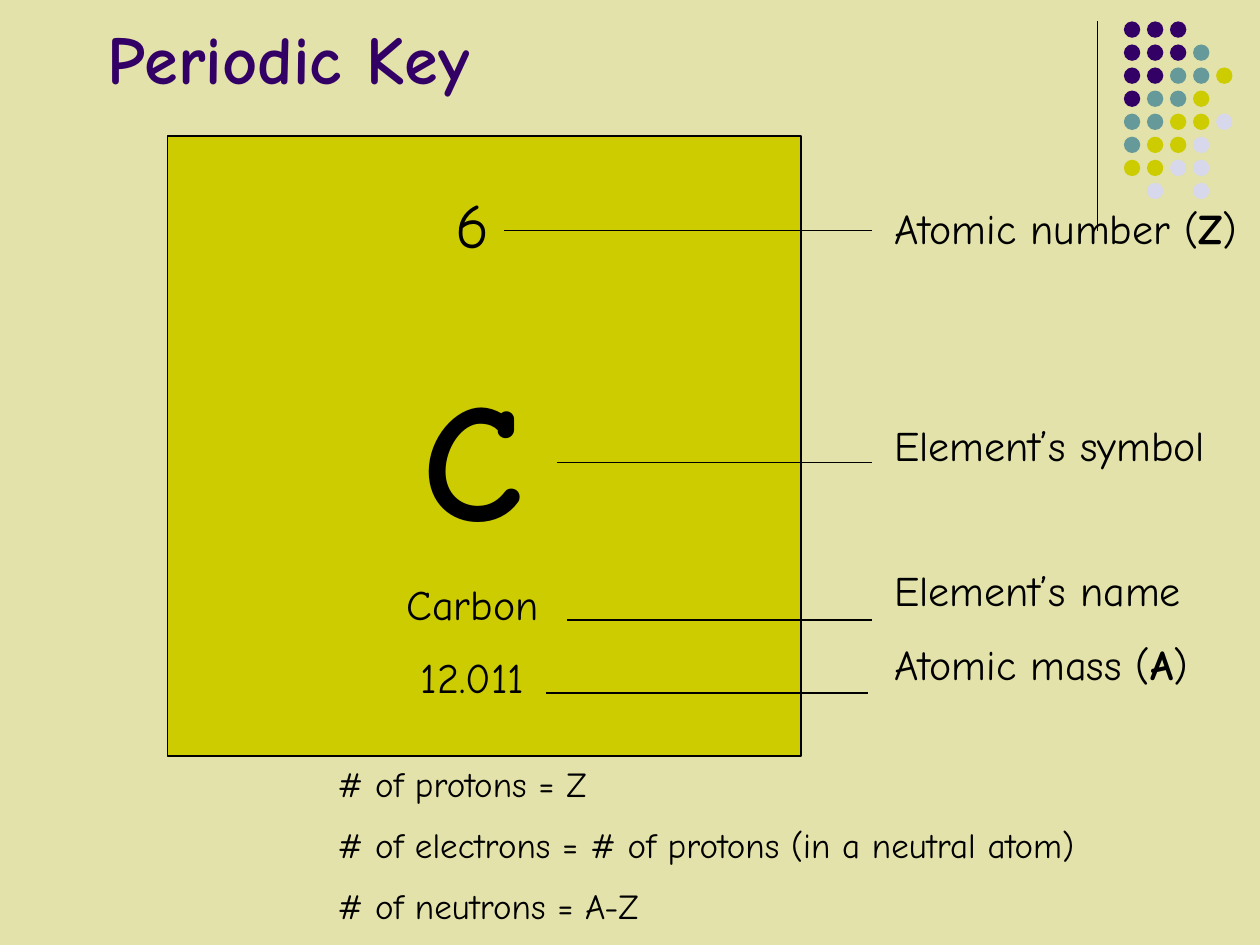
from lxml import etree
from pptx import Presentation
from pptx import util as u
from pptx.dml.color import RGBColor
from pptx.enum import shapes, text
from pptx.oxml import ns

CREAM = RGBColor(0xE2, 0xE2, 0xAA)
PURPLE = RGBColor(0x33, 0x00, 0x66)
TEAL = RGBColor(0x66, 0x99, 0x99)
OLIVE = RGBColor(0xCC, 0xCC, 0x00)
LAVENDER = RGBColor(0xD8, 0xD8, 0xEC)
BLACK = RGBColor(0x00, 0x00, 0x00)

DOT_COLORS = {"P": PURPLE, "T": TEAL, "O": OLIVE, "L": LAVENDER}
DOT_ROWS = ["PPP", "PPPT", "PPTTO", "PTTO", "TTOOL", "TOOL", "OOLL", " L L"]
DOT_SIZE = 0.13
DOT_STEP = 0.183

CELL_ROWS = [
    (0, [("6", 36, False)]),
    (53, [("C", 96, True)]),
    (13.3, [("Carbon", 24, False)]),
    (13.3, [("12.011", 24, False)]),
]
LABEL_ROWS = [
    (0, [("Atomic number (", 24, False), ("Z", 24, True), (")", 24, False)]),
    (95, [("Element’s symbol", 24, False)]),
    (54.2, [("Element’s name", 24, False)]),
    (13.3, [("Atomic mass (", 24, False), ("A", 24, True), (")", 24, False)]),
]
FORMULA_ROWS = [
    (0, [("# of protons = Z", 20, False)]),
    (11, [("# of electrons = # of protons (in a neutral atom)", 20, False)]),
    (11, [("# of neutrons = A-Z", 20, False)]),
]
LEADERS = [(4, 6.92, 1.83), (4.5, 6.92, 4.92), (4.33, 6.89, 5.5), (4.42, 6.92, 3.67)]


class SlideWriter:
    font = "Comic Neue"

    def __init__(self, page):
        self.page = page
        fill = page.background.fill
        fill.solid()
        fill.fore_color.rgb = CREAM

    def span(self, para, words, size, bold, color=BLACK):
        span = para.add_run()
        span.text = words
        span.font.name = self.font
        span.font.size = u.Pt(size)
        span.font.bold = bold
        span.font.color.rgb = color

    def title(self, words, left, top, width, height):
        box = self.page.shapes.title
        box.left, box.top = u.Inches(left), u.Inches(top)
        box.width, box.height = u.Inches(width), u.Inches(height)
        frame = box.text_frame
        frame.auto_size = text.MSO_AUTO_SIZE.NONE
        frame.vertical_anchor = text.MSO_ANCHOR.TOP
        frame.margin_top = 0
        para = frame.paragraphs[0]
        para.alignment = text.PP_ALIGN.LEFT
        self.span(para, words, 39, True, PURPLE)

    def text_box(self, rows, left, top, width, height, align=text.PP_ALIGN.LEFT):
        box = self.page.shapes.add_textbox(
            u.Inches(left), u.Inches(top), u.Inches(width), u.Inches(height))
        frame = box.text_frame
        frame.word_wrap = True
        for index, (gap, spans) in enumerate(rows):
            para = frame.add_paragraph() if index else frame.paragraphs[0]
            para.alignment = align
            para.space_before = u.Pt(gap)
            for words, size, bold in spans:
                self.span(para, words, size, bold)

    def shape(self, kind, left, top, width, height, color, outline=None):
        shape = self.page.shapes.add_shape(
            kind, u.Inches(left), u.Inches(top), u.Inches(width), u.Inches(height))
        shape.shadow.inherit = False
        shape.fill.solid()
        shape.fill.fore_color.rgb = color
        if outline:
            shape.line.color.rgb = BLACK
            shape.line.width = u.Pt(outline)
        else:
            shape.line.fill.background()

    def line(self, x1, y1, x2, y2, weight=1):
        line = self.page.shapes.add_connector(
            shapes.MSO_CONNECTOR.STRAIGHT,
            u.Inches(x1), u.Inches(y1), u.Inches(x2), u.Inches(y2))
        line.line.color.rgb = BLACK
        line.line.width = u.Pt(weight)
        etree.SubElement(line._element.spPr, ns.qn("a:effectLst"))

    def dots(self, left, top):
        for row, codes in enumerate(DOT_ROWS):
            for column, code in enumerate(codes):
                if code in DOT_COLORS:
                    self.shape(shapes.MSO_SHAPE.OVAL,
                               left + column * DOT_STEP, top + row * DOT_STEP,
                               DOT_SIZE, DOT_SIZE, DOT_COLORS[code])


def main():
    deck = Presentation()
    deck.slide_width, deck.slide_height = u.Inches(10), u.Inches(7.5)
    writer = SlideWriter(deck.slides.add_slide(deck.slide_layouts[5]))

    writer.line(8.71, 0.17, 8.71, 1.83, 0.75)
    writer.dots(8.92, 0.17)
    writer.title("Periodic Key", 0.75, 0.13, 8.5, 1.29)
    writer.shape(shapes.MSO_SHAPE.FLOWCHART_PROCESS, 1.33, 1.08, 5.03, 4.92, OLIVE, 1)
    writer.text_box(CELL_ROWS, 1.25, 1.42, 5, 4.3, text.PP_ALIGN.CENTER)
    for start, end, height in LEADERS:
        writer.line(start, height, end, height)
    writer.text_box(LABEL_ROWS, 7, 1.56, 3.44, 4.69)
    writer.text_box(FORMULA_ROWS, 2.58, 6, 8.92, 2.03)

    deck.save("out.pptx")


if __name__ == "__main__":
    main()
